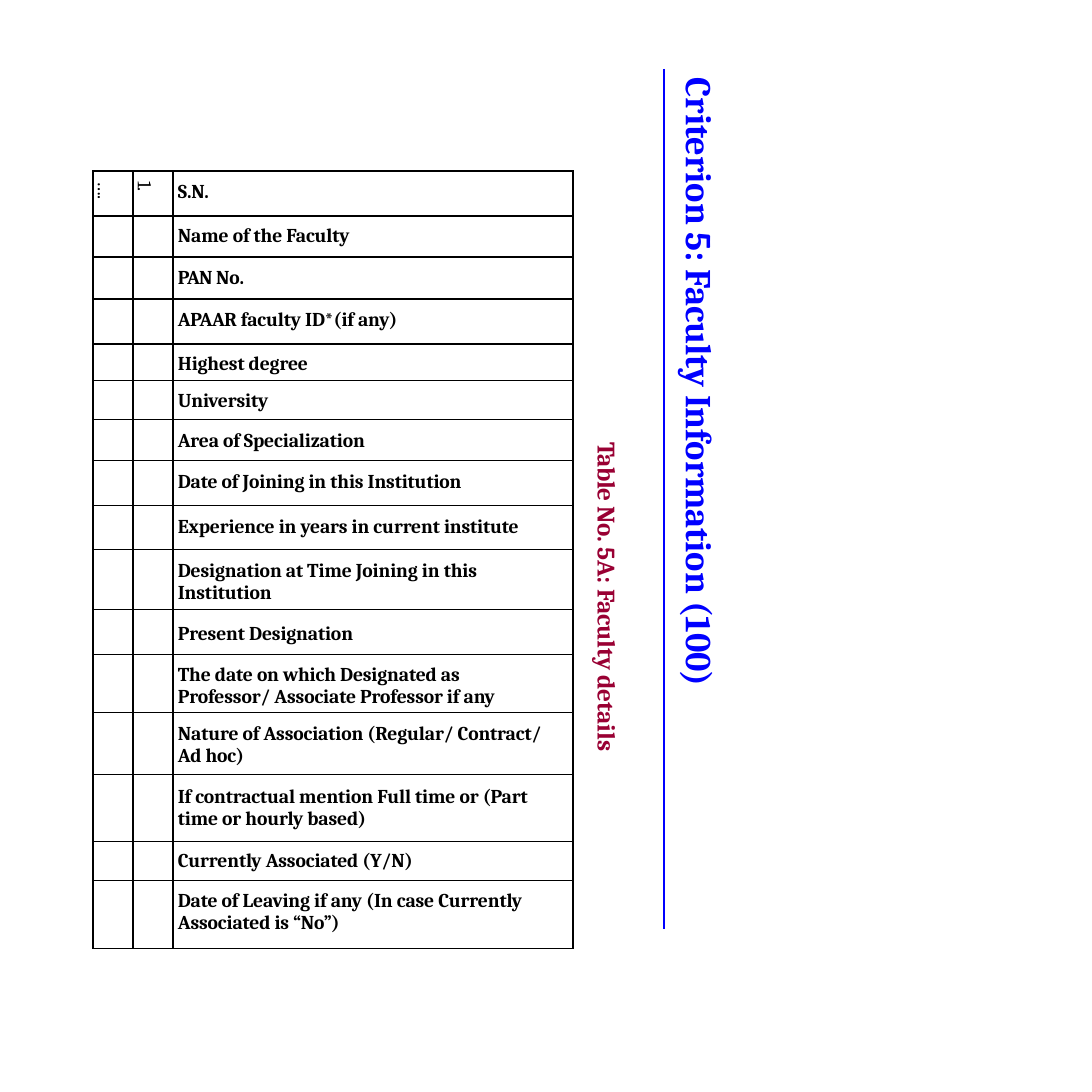
from dataclasses import dataclass
from lxml.etree import SubElement
from pptx import Presentation
from pptx.dml.color import RGBColor
from pptx.enum.shapes import MSO_CONNECTOR
from pptx.oxml.ns import qn
from pptx.util import Pt

SCALE = 914400 / 100.8


@dataclass(frozen=True)
class Theme:
    face: str = "Cambria"
    ink: str = "000000"
    blue: str = "0000FF"
    wine: str = "990033"
    title: int = 26
    sub: int = 18
    body: int = 14
    thin: float = 1
    rule: float = 1.25
    thick: float = 1.5
    tight: int = -10


THEME = Theme()
COLS = [40, 40, 400]
ROWS = [
    (45, 10, ["S.N."]),
    (41, 9, ["Name of the Faculty"]),
    (42, 10, [("PAN ", -50), "No."]),
    (45, 10, [("APAAR ", -30), "faculty ID*(if any)"]),
    (37, 9, ["Highest degree"]),
    (39, 9, ["University"]),
    (41, 10, ["Area of Specialization"]),
    (45, 10, ["Date of Joining in this Institution"]),
    (44, 10, ["Experience in years in current institute"]),
    (60, 10, ["Designation at Time Joining in this\nInstitution"]),
    (45, 13, ["Present Designation"]),
    (58, 9, ["The date on which Designated as\nProfessor/ Associate Professor if ",
             ("any", -20)]),
    (62, 10, ["Nature of Association (Regular/ Contract/\nAd hoc)"]),
    (67, 11, ["If contractual mention Full time or (Part\ntime or hourly based)"]),
    (39, 8, ["Currently Associated (Y/N)"]),
    (68, 9, ["Date of Leaving if ", ("any", -20),
             " (In case Currently\nAssociated is “No”)"]),
]


def px(n):
    return round(n * SCALE)


def write(para, runs, size, color, bold=True):
    for item in runs:
        text, gap = (item, THEME.tight) if isinstance(item, str) else item
        for i, line in enumerate(text.split("\n")):
            if i:
                para.add_line_break()
                SubElement(para._p[-1], qn("a:rPr"), sz=str(size * 100))
            run = para.add_run()
            run.text = line
            font = run.font
            font.name, font.size, font.bold = THEME.face, Pt(size), bold
            font.color.rgb = RGBColor.from_string(color)
            run._r.get_or_add_rPr().set("spc", str(gap))


def add_head(slide, box, runs, size, color, lead=None):
    frame = slide.shapes.add_textbox(*map(px, box)).text_frame
    frame.margin_left = frame.margin_right = 0
    frame.margin_top = frame.margin_bottom = 0
    frame.word_wrap = True
    frame._txBody.bodyPr.set("vert", "vert")
    para = frame.paragraphs[0]
    if lead:
        para.line_spacing = Pt(lead)
    write(para, runs, size, color)


def add_rule(slide, x, top, end):
    line = slide.shapes.add_connector(
        MSO_CONNECTOR.STRAIGHT, px(x), px(top), px(x), px(end))
    line.line.color.rgb = RGBColor.from_string(THEME.blue)
    line.line.width = Pt(THEME.rule)
    SubElement(line._element.spPr, qn("a:effectLst"))


def set_edges(cell, left, right):
    props = cell._tc.get_or_add_tcPr()
    sides = {"L": left, "R": right, "T": THEME.thin, "B": THEME.thin}
    for side, width in sides.items():
        edge = SubElement(props, qn("a:ln" + side), w=str(Pt(width)))
        fill = SubElement(edge, qn("a:solidFill"))
        SubElement(fill, qn("a:srgbClr"), val=THEME.ink)


def add_mark(cell, text):
    cell.margin_top = px(5)
    cell._tc.get_or_add_tcPr().set("vert", "vert")
    para = cell.text_frame.paragraphs[0]
    para.space_before = Pt(3.2)
    para._p.get_or_add_pPr().set("marL", str(px(10)))
    write(para, [text], THEME.body, THEME.ink, False)


def add_grid(slide, left, top):
    high = sum(row[0] for row in ROWS)
    table = slide.shapes.add_table(
        len(ROWS), len(COLS), px(left), px(top), px(sum(COLS)), px(high)).table
    table.first_row = table.horz_banding = False
    for col, width in zip(table.columns, COLS):
        col.width = px(width)
    edges = [THEME.thick, THEME.thick, THEME.thin, THEME.thick]
    for r, (height, inset, label) in enumerate(ROWS):
        table.rows[r].height = px(height)
        for c in range(len(COLS)):
            cell = table.cell(r, c)
            cell.margin_left = cell.margin_right = 0
            cell.margin_top = cell.margin_bottom = 0
            set_edges(cell, edges[c], edges[c + 1])
            cell.fill.background()
            cell.text_frame.paragraphs[0].font.size = Pt(THEME.body)
        cell.margin_left, cell.margin_top = px(5), px(inset)
        write(cell.text_frame.paragraphs[0], label, THEME.body, THEME.ink)
    for c, mark in enumerate(["….", "1."]):
        add_mark(table.cell(0, c), mark)


def main():
    deck = Presentation()
    deck.slide_width = deck.slide_height = px(1092)
    slide = deck.slides.add_slide(deck.slide_layouts[6])
    add_head(slide, (591, 442, 32, 326),
             [("Table ", -30), "No. 5A: Faculty details"],
             THEME.sub, THEME.wine)
    add_head(slide, (677, 78, 45, 637),
             ["Criterion 5: ", ("Faculty ", -20), "Information (100)"],
             THEME.title, THEME.blue, 30.9)
    add_grid(slide, 93, 171)
    add_rule(slide, 664, 69, 929)
    deck.save("out.pptx")


if __name__ == "__main__":
    main()
